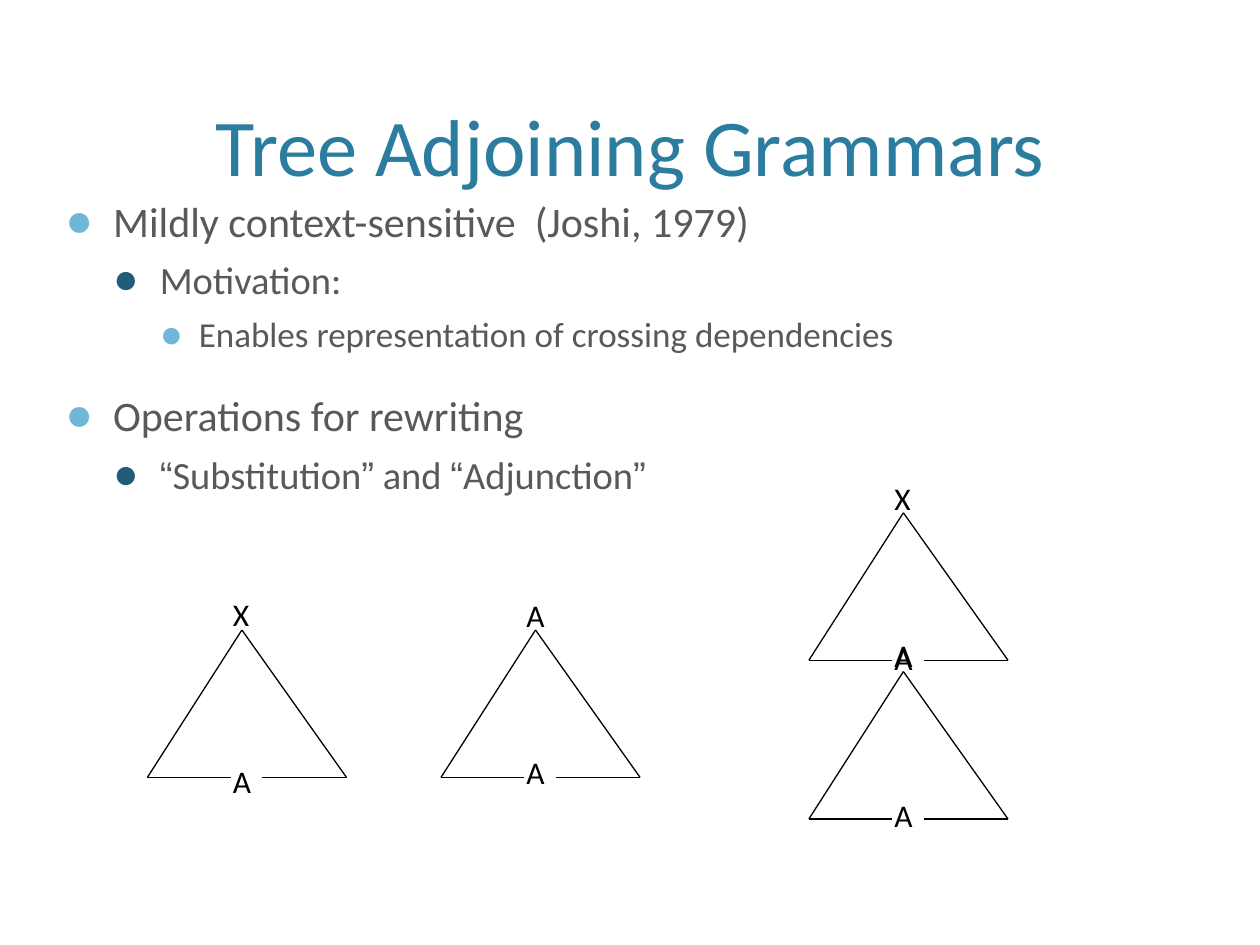
import pptx
import pptx.util
import pptx.dml.color
import pptx.enum.shapes
import pptx.enum.text
import pptx.oxml
import pptx.oxml.ns
import lxml.etree

# Content
TITLE = "Tree Adjoining Grammars"
BODY = [  # level, runs of (text, font)
    (0, [("Mildly context-sensitive  (Joshi, 1979)", "Calibri")]),
    (1, [("Motivation:", "Calibri")]),
    (2, [("Enables representation of crossing dependencies", "Calibri")]),
    (0, [("Operations for rewriting", "Calibri")]),
    (1, [("“", "Arial"), ("Substitution", "Calibri"), ("”", "Arial"),
         (" and ", "Calibri"),
         ("“", "Arial"), ("Adjunction", "Calibri"), ("”", "Arial")]),
]
TREES = [  # apex x, apex y, (root label, top), (foot label, top)
    (192, 500, ("X", 467), ("A", 600)),
    (425, 500, ("A", 468), ("A", 593)),
    (717, 407, ("X", 375), ("A", 500)),
    (717, 533, ("A", 502), ("A", 627)),
]

# Style
COLORS = {"title": "2C7C9F", "text": "595959", "ink": "000000",
          "light": "6FB7D7", "dark": "215D77"}
LEVELS = [  # size, space before, text indent, hanging indent, bullet colour
    (24, 20, 38, 38, "light"),
    (22, 6, 75, 37, "dark"),
    (20, 6, 106, 31, "light"),
]
# Triangle geometry, relative to the apex
LEFT, RIGHT, HEIGHT = -75, 83, 117
GAP_LEFT, GAP_RIGHT = -9, 16
SEGMENTS = [
    ((0, 0), (LEFT, HEIGHT)),
    ((0, 0), (RIGHT, HEIGHT)),
    ((LEFT, HEIGHT), (GAP_LEFT, HEIGHT)),
    ((GAP_RIGHT, HEIGHT), (RIGHT, HEIGHT)),
]
LABEL_OFFSET, LABEL_WIDTH, LABEL_HEIGHT = -17, 37, 40


def px(length):
    """100 px to the inch."""
    return pptx.util.Emu(length * 9144)


def color(name):
    return pptx.dml.color.RGBColor.from_string(COLORS[name])


def add_run(paragraph, text, font, size, color_name):
    run = paragraph.add_run()
    run.text = text
    run.font.name = font
    run.font.size = pptx.util.Pt(size)
    run.font.color.rgb = color(color_name)


def add_bullet(paragraph, indent, hanging, color_name):
    properties = paragraph._p.get_or_add_pPr()
    properties.set("marL", str(px(indent)))
    properties.set("indent", str(px(-hanging)))
    namespace = pptx.oxml.ns.nsdecls("a")
    for xml in (
        f'<a:buClr {namespace}><a:srgbClr val="{COLORS[color_name]}"/></a:buClr>',
        f'<a:buSzPct {namespace} val="110000"/>',
        f'<a:buFont {namespace} typeface="Arial"/>',
        f'<a:buChar {namespace} char="●"/>',
    ):
        properties.append(pptx.oxml.parse_xml(xml))


def add_label(slide, text, left, top):
    box = slide.shapes.add_textbox(px(left), px(top), px(LABEL_WIDTH), px(LABEL_HEIGHT))
    box.text_frame.word_wrap = False
    box.text_frame.auto_size = pptx.enum.text.MSO_AUTO_SIZE.SHAPE_TO_FIT_TEXT
    add_run(box.text_frame.paragraphs[0], text, "Calibri", 18, "ink")


def add_line(slide, start, end):
    line = slide.shapes.add_connector(
        pptx.enum.shapes.MSO_CONNECTOR.STRAIGHT, *map(px, start + end))
    line.line.color.rgb = color("ink")
    line.line.width = pptx.util.Pt(0.75)
    lxml.etree.SubElement(line._element.spPr, pptx.oxml.ns.qn("a:effectLst"))


def add_tree(slide, x, y, root, foot):
    for (x1, y1), (x2, y2) in SEGMENTS:
        add_line(slide, (x + x1, y + y1), (x + x2, y + y2))
    for text, top in (root, foot):
        add_label(slide, text, x + LABEL_OFFSET, top)


def main():
    presentation = pptx.Presentation()
    presentation.slide_width, presentation.slide_height = px(1000), px(750)
    slide = presentation.slides.add_slide(presentation.slide_layouts[5])

    # Title
    title = slide.shapes.title
    title.left, title.top, title.width, title.height = map(px, (60, 12, 880, 146))
    frame = title.text_frame
    frame.vertical_anchor = pptx.enum.text.MSO_ANCHOR.BOTTOM
    frame.auto_size = pptx.enum.text.MSO_AUTO_SIZE.NONE
    frame.paragraphs[0].alignment = pptx.enum.text.PP_ALIGN.CENTER
    add_run(frame.paragraphs[0], TITLE, "Calibri", 46, "title")

    # Bulleted text
    frame = slide.shapes.add_textbox(*map(px, (42, 150, 900, 300))).text_frame
    frame.word_wrap = True
    for index, (level, runs) in enumerate(BODY):
        size, before, indent, hanging, bullet_color = LEVELS[level]
        paragraph = frame.add_paragraph() if index else frame.paragraphs[0]
        paragraph.level = level
        paragraph.space_before = pptx.util.Pt(before)
        add_bullet(paragraph, indent, hanging, bullet_color)
        for text, font in runs:
            add_run(paragraph, text, font, size, "text")

    # Trees
    for tree in TREES:
        add_tree(slide, *tree)

    presentation.save("out.pptx")


if __name__ == "__main__":
    main()
